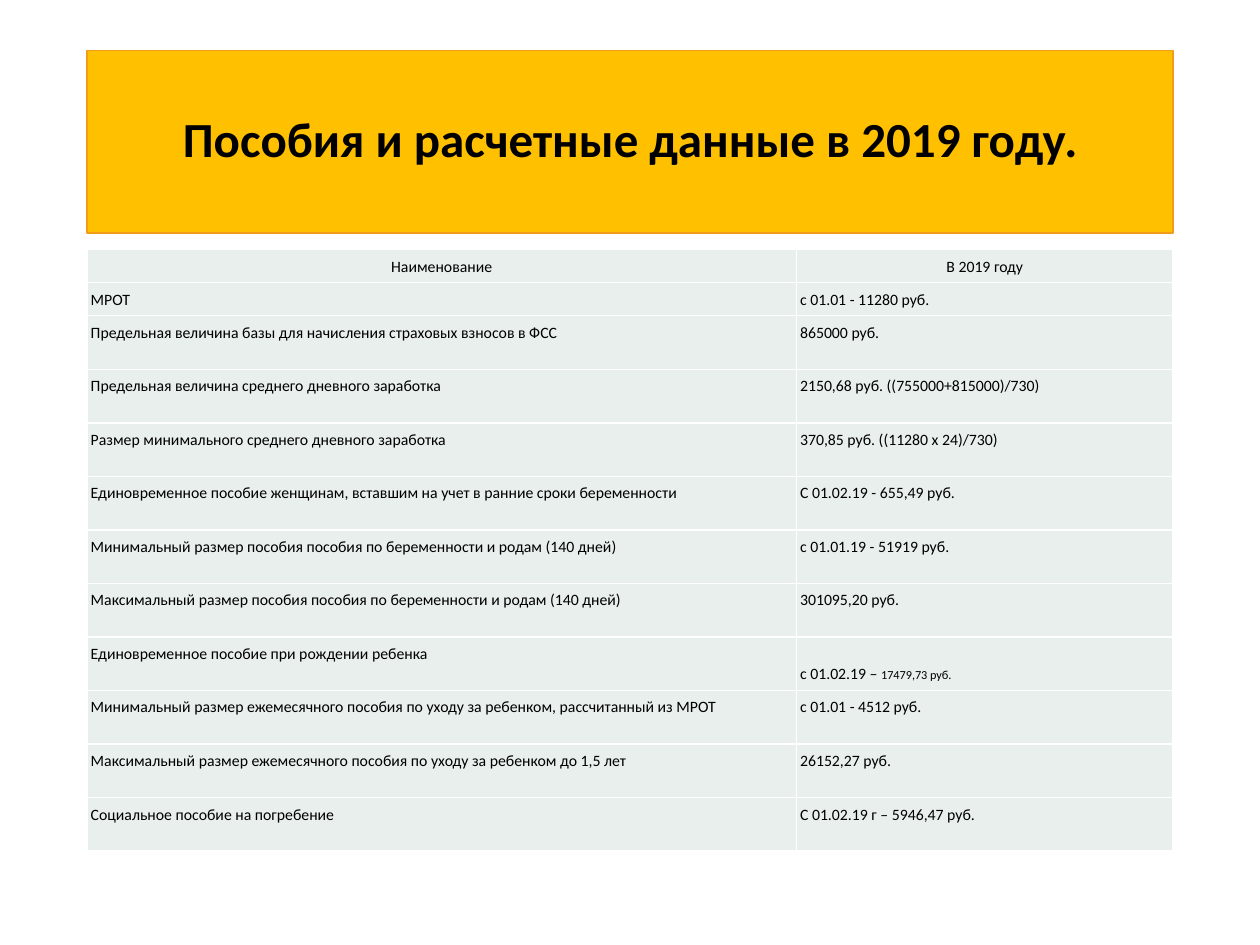
"""Build a slide with the table of benefits and reference amounts for 2019."""
from dataclasses import dataclass

from lxml import etree
from pptx import Presentation
from pptx.dml.color import RGBColor
from pptx.enum.shapes import MSO_SHAPE
from pptx.enum.text import MSO_ANCHOR, PP_ALIGN
from pptx.oxml.ns import qn
from pptx.util import Inches, Pt

RECTANGLE = MSO_SHAPE.RECTANGLE
MIDDLE = MSO_ANCHOR.MIDDLE
TOP = MSO_ANCHOR.TOP
CENTER = PP_ALIGN.CENTER
LEFT = PP_ALIGN.LEFT


@dataclass(frozen=True)
class Theme:
    font: str = "Calibri"
    ink: str = "000000"
    banner: str = "FFC000"
    banner_line: str = "F19D19"
    cell: str = "E8EFEC"
    grid: str = "FFFFFF"
    title_size: float = 28
    body_size: float = 9
    small_size: float = 7
    title_spacing: float = 0.9
    body_spacing: float = 1.07


class SlideBuilder:
    def __init__(self, page, theme):
        self.page = page
        self.theme = theme

    def add_text(self, para, runs, spacing, align=LEFT, bold=False):
        para.alignment = align
        para.line_spacing = spacing
        for text, size in runs:
            span = para.add_run()
            span.text = text
            span.font.name = self.theme.font
            span.font.size = Pt(size)
            span.font.bold = bold
            span.font.color.rgb = RGBColor.from_string(self.theme.ink)

    def banner(self, text, left, top, width, height):
        theme = self.theme
        box = self.page.shapes.add_shape(
            RECTANGLE, Inches(left), Inches(top), Inches(width), Inches(height))
        box.shadow.inherit = False
        box.fill.solid()
        box.fill.fore_color.rgb = RGBColor.from_string(theme.banner)
        box.line.color.rgb = RGBColor.from_string(theme.banner_line)
        box.line.width = Pt(0.75)
        frame = box.text_frame
        frame.word_wrap = True
        frame.vertical_anchor = MIDDLE
        self.add_text(frame.paragraphs[0], [(text, theme.title_size)],
                      theme.title_spacing, CENTER, bold=True)

    def cell(self, cell, runs, align, top_margin):
        cell.margin_left = cell.margin_right = Inches(0.03)
        cell.margin_top = Inches(top_margin)
        cell.margin_bottom = Inches(0.05)
        cell.vertical_anchor = TOP
        self.add_text(cell.text_frame.paragraphs[0], runs, self.theme.body_spacing, align)
        properties = cell._tc.get_or_add_tcPr()
        for side in ("a:lnL", "a:lnR", "a:lnT", "a:lnB"):
            border = etree.SubElement(properties, qn(side), w=str(Pt(1)))
            fill = etree.SubElement(border, qn("a:solidFill"))
            etree.SubElement(fill, qn("a:srgbClr"), val=self.theme.grid)
        cell.fill.solid()
        cell.fill.fore_color.rgb = RGBColor.from_string(self.theme.cell)

    def table(self, rows, left, top, widths, heights, lowered):
        frame = self.page.shapes.add_table(
            len(rows), len(widths), Inches(left), Inches(top),
            Inches(sum(widths)), Inches(sum(heights)))
        table = frame.table
        table.first_row = table.horz_banding = False
        for column, width in zip(table.columns, widths):
            column.width = Inches(width)
        for r, (values, height) in enumerate(zip(rows, heights)):
            table.rows[r].height = Inches(height)
            for c, value in enumerate(values):
                runs = [(value, self.theme.body_size)] if isinstance(value, str) else value
                self.cell(table.cell(r, c), runs, LEFT if r else CENTER,
                          lowered.get((r, c), 0.05))


def main():
    theme = Theme()
    deck = Presentation()
    deck.slide_width, deck.slide_height = Inches(10), Inches(7.5)
    builder = SlideBuilder(deck.slides.add_slide(deck.slide_layouts[6]), theme)

    left, widths = 0.69, (5.63, 2.99)
    builder.banner("Пособия и расчетные данные в 2019 году.", left, 0.4, sum(widths), 1.45)

    birth_amount = [("с 01.02.19 – ", theme.body_size), ("17479,73 руб.", theme.small_size)]
    rows = [
        ("Наименование", "В 2019 году"),
        ("МРОТ", "с 01.01 - 11280 руб."),
        ("Предельная величина базы для начисления страховых взносов в ФСС", "865000 руб."),
        ("Предельная величина среднего дневного заработка",
         "2150,68 руб. ((755000+815000)/730)"),
        ("Размер минимального среднего дневного заработка", "370,85 руб. ((11280 х 24)/730)"),
        ("Единовременное пособие женщинам, вставшим на учет в ранние сроки беременности",
         "С 01.02.19 - 655,49 руб."),
        ("Минимальный размер пособия пособия по беременности и родам (140 дней)",
         "с 01.01.19 - 51919 руб."),
        ("Максимальный размер пособия пособия по беременности и родам (140 дней)",
         "301095,20 руб."),
        ("Единовременное пособие при рождении ребенка", birth_amount),
        ("Минимальный размер ежемесячного пособия по уходу за ребенком, рассчитанный из МРОТ",
         "с 01.01 - 4512 руб."),
        ("Максимальный размер ежемесячного пособия по уходу за ребенком до 1,5 лет",
         "26152,27 руб."),
        ("Социальное пособие на погребение", "С 01.02.19 г – 5946,47 руб."),
    ]
    short_rows, short_height, table_height = 2, 0.26, 4.77
    tall_rows = len(rows) - short_rows
    tall_height = (table_height - short_rows * short_height) / tall_rows
    heights = [short_height] * short_rows + [tall_height] * tall_rows
    builder.table(rows, left, 1.98, widths, heights, lowered={(8, 1): 0.21})

    deck.save("out.pptx")


if __name__ == "__main__":
    main()
